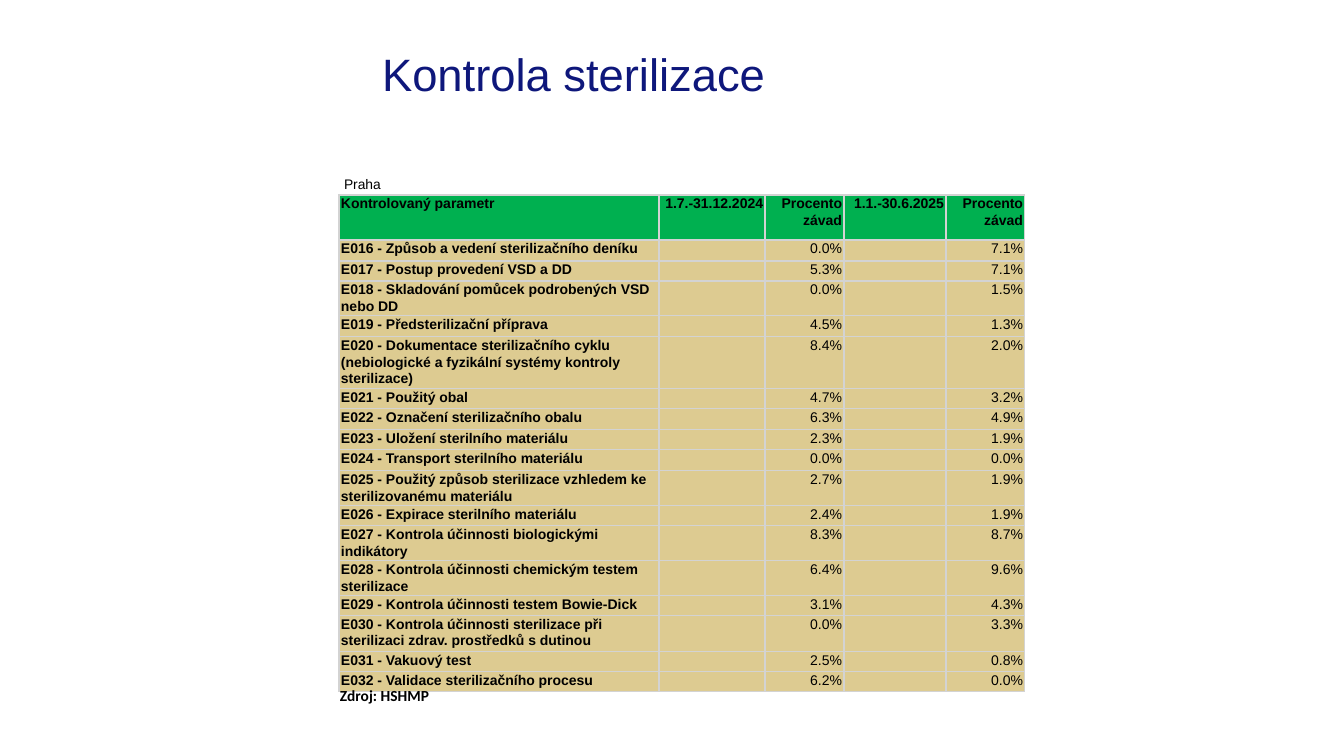
import lxml.etree
import pptx
import pptx.dml.color
import pptx.enum.text
import pptx.oxml.ns
import pptx.util

EMU_PER_PX = 914400 / 100.8
COLORS = {"title": "0E177B", "text": "000000", "header": "00B050",
          "body": "DDCB91", "border": "D3D3D3"}
LEFT = pptx.enum.text.PP_ALIGN.LEFT
RIGHT = pptx.enum.text.PP_ALIGN.RIGHT
MIDDLE = pptx.enum.text.MSO_ANCHOR.MIDDLE

COLUMN_WIDTHS = [320, 106, 79, 102, 79]
HEADER_HEIGHT = 45
HEADINGS = ["Kontrolovaný parametr", "1.7.-31.12.2024", "Procento závad",
            "1.1.-30.6.2025", "Procento závad"]
# Row height, parameter, share of faults in each half-year
PARAMETERS = [
    (21, "E016 - Způsob a vedení sterilizačního deníku", "0.0%", "7.1%"),
    (20, "E017 - Postup provedení VSD a DD", "5.3%", "7.1%"),
    (35, "E018 - Skladování pomůcek podrobených VSD nebo DD", "0.0%", "1.5%"),
    (21, "E019 - Předsterilizační příprava", "4.5%", "1.3%"),
    (52, "E020 - Dokumentace sterilizačního cyklu (nebiologické a fyzikální "
         "systémy kontroly sterilizace)", "8.4%", "2.0%"),
    (20, "E021 - Použitý obal", "4.7%", "3.2%"),
    (21, "E022 - Označení sterilizačního obalu", "6.3%", "4.9%"),
    (20, "E023 - Uložení sterilního materiálu", "2.3%", "1.9%"),
    (21, "E024 - Transport sterilního materiálu", "0.0%", "0.0%"),
    (35, "E025 - Použitý způsob sterilizace vzhledem ke sterilizovanému "
         "materiálu", "2.7%", "1.9%"),
    (20, "E026 - Expirace sterilního materiálu", "2.4%", "1.9%"),
    (35, "E027 - Kontrola účinnosti biologickými indikátory", "8.3%", "8.7%"),
    (35, "E028 - Kontrola účinnosti chemickým testem sterilizace", "6.4%", "9.6%"),
    (20, "E029 - Kontrola účinnosti testem Bowie-Dick", "3.1%", "4.3%"),
    (36, "E030 - Kontrola účinnosti sterilizace při sterilizaci zdrav. "
         "prostředků s dutinou", "0.0%", "3.3%"),
    (20, "E031 - Vakuový test", "2.5%", "0.8%"),
    (20, "E032 - Validace sterilizačního procesu", "6.2%", "0.0%"),
]


def px(length):
    return pptx.util.Emu(round(length * EMU_PER_PX))


def rgb(name):
    return pptx.dml.color.RGBColor.from_string(COLORS[name])


def add_element(parent, tag, **attributes):
    return lxml.etree.SubElement(parent, pptx.oxml.ns.qn(tag), attributes)


def write(para, text, size=10, font="Arial", color="text", bold=False,
          align=LEFT, spacing=1, before=0, indent=0):
    """Fill a paragraph; an empty one still keeps its text size."""
    para.alignment = align
    para.line_spacing = spacing
    para.space_before = pptx.util.Pt(before)
    if indent:
        properties = para._p.get_or_add_pPr()
        properties.set("marL", str(px(indent)))
        properties.set("indent", "0")
    if not text:
        add_element(para._p, "a:endParaRPr", sz=str(size * 100))
        return
    span = para.add_run()
    span.text = text
    span.font.size = pptx.util.Pt(size)
    span.font.name = font
    span.font.bold = bold
    span.font.color.rgb = rgb(color)


def add_title(page, left, top, width, height):
    title = page.shapes.title
    title.left, title.top = px(left), px(top)
    title.width, title.height = px(width), px(height)
    frame = title.text_frame
    frame.auto_size = pptx.enum.text.MSO_AUTO_SIZE.NONE
    frame.vertical_anchor = MIDDLE
    write(frame.paragraphs[0], "Kontrola sterilizace", size=32.4,
          color="title", spacing=0.9, indent=239)
    write(frame.add_paragraph(), "Praha", size=9.9, spacing=0.9,
          before=54, indent=201)


def format_cell(cell, text, fill, bold, align):
    cell.margin_left = cell.margin_right = px(2)
    cell.margin_top = cell.margin_bottom = 0
    write(cell.text_frame.paragraphs[0], text, bold=bold, align=align, spacing=1.07)
    properties = cell._tc.get_or_add_tcPr()
    for side in ("a:lnL", "a:lnR", "a:lnT", "a:lnB"):
        line = add_element(properties, side, w=str(pptx.util.Pt(1)))
        paint = add_element(line, "a:solidFill")
        add_element(paint, "a:srgbClr", val=COLORS["border"])
    cell.fill.solid()
    cell.fill.fore_color.rgb = rgb(fill)


def add_fault_table(page, left, top):
    rows = [(HEADER_HEIGHT, HEADINGS)]
    rows += [(height, [name, "", first, "", second])
             for height, name, first, second in PARAMETERS]
    table = page.shapes.add_table(
        len(rows), len(COLUMN_WIDTHS), px(left), px(top),
        px(sum(COLUMN_WIDTHS)), px(sum(height for height, _ in rows))).table
    table.first_row = table.horz_banding = False
    for column, width in zip(table.columns, COLUMN_WIDTHS):
        column.width = px(width)
    for row_index, (height, texts) in enumerate(rows):
        table.rows[row_index].height = px(height)
        is_header = row_index == 0
        for column_index, text in enumerate(texts):
            is_name = column_index == 0
            format_cell(table.cell(row_index, column_index), text,
                        fill="header" if is_header else "body",
                        bold=is_header or is_name,
                        align=LEFT if is_name else RIGHT)


def add_credit(page, left, top, width, height):
    box = page.shapes.add_textbox(px(left), px(top), px(width), px(height))
    box.text_frame.word_wrap = True
    box.text_frame.vertical_anchor = MIDDLE
    write(box.text_frame.paragraphs[0], "Zdroj: HSHMP", size=11,
          font="Calibri", bold=True)


def main():
    deck = pptx.Presentation()
    deck.slide_width, deck.slide_height = px(1344), px(756)
    page = deck.slides.add_slide(deck.slide_layouts[5])
    add_title(page, 133, 45, 1121, 155)
    add_fault_table(page, 339, 195)
    add_credit(page, 330, 681, 155, 29)
    deck.save("out.pptx")


if __name__ == "__main__":
    main()
